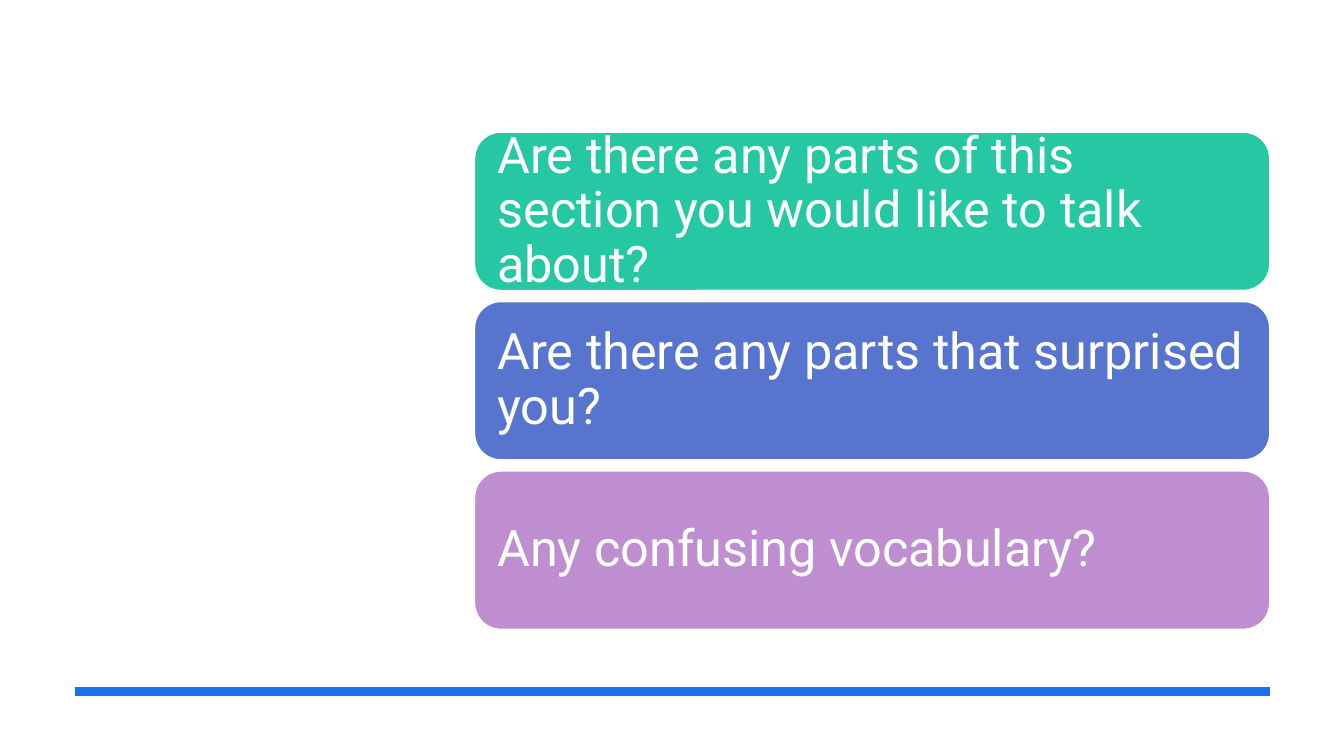
from dataclasses import dataclass

from lxml import etree
from pptx import Presentation
from pptx import util as u
from pptx.dml.color import RGBColor
from pptx.enum import shapes, text
from pptx.oxml.ns import qn


@dataclass(frozen=True)
class Theme:
    font: str = "Roboto"
    question_size: int = 36
    white: str = "FFFFFF"
    rule: str = "1973EB"
    cards: tuple = ("25C8A2", "5775CF", "BF8ED1")


QUESTIONS = (
    "Are there any parts of this section you would like to talk about?",
    "Are there any parts that surprised you?",
    "Any confusing vocabulary?",
)
CARD_LEFT, CARD_TOP = 11.96, 3.33
CARD_WIDTH, CARD_HEIGHT = 20.04, 3.99
CARD_PITCH = 4.27
CARD_INSET = 0.38
RULE_LEFT, RULE_RIGHT, RULE_Y = 1.88, 32.0, 17.42


class SlideBuilder:
    """Draws styled elements on the current slide; lengths are centimetres."""

    def __init__(self, slide, theme):
        self.slide = slide
        self.theme = theme

    def rule(self, left, right, y, weight):
        rule = self.slide.shapes.add_connector(
            shapes.MSO_CONNECTOR.STRAIGHT, u.Cm(left), u.Cm(y), u.Cm(right), u.Cm(y))
        rule.line.color.rgb = RGBColor.from_string(self.theme.rule)
        rule.line.width = u.Pt(weight)
        etree.SubElement(rule._element.spPr, qn("a:effectLst"))

    def card(self, question, top, fill):
        white = RGBColor.from_string(self.theme.white)
        card = self.slide.shapes.add_shape(
            shapes.MSO_SHAPE.ROUNDED_RECTANGLE,
            u.Cm(CARD_LEFT), u.Cm(top), u.Cm(CARD_WIDTH), u.Cm(CARD_HEIGHT))
        card.shadow.inherit = False
        card.fill.solid()
        card.fill.fore_color.rgb = RGBColor.from_string(fill)
        card.line.color.rgb = white
        card.line.width = u.Pt(1)

        frame = card.text_frame
        frame.word_wrap = True
        frame.vertical_anchor = text.MSO_ANCHOR.MIDDLE
        frame.margin_left = frame.margin_right = u.Cm(CARD_INSET)
        frame.margin_top = frame.margin_bottom = u.Cm(CARD_INSET)
        frame.text = question
        paragraph = frame.paragraphs[0]
        paragraph.alignment = text.PP_ALIGN.LEFT
        paragraph.line_spacing = 0.9
        font = paragraph.runs[0].font
        font.name = self.theme.font
        font.size = u.Pt(self.theme.question_size)
        font.color.rgb = white


def main():
    deck = Presentation()
    deck.slide_width, deck.slide_height = u.Cm(33.87), u.Cm(19.05)
    theme = Theme()
    builder = SlideBuilder(deck.slides.add_slide(deck.slide_layouts[6]), theme)
    builder.rule(RULE_LEFT, RULE_RIGHT, RULE_Y, weight=6)
    for row, (question, fill) in enumerate(zip(QUESTIONS, theme.cards)):
        builder.card(question, CARD_TOP + row * CARD_PITCH, fill)
    deck.save("out.pptx")


if __name__ == "__main__":
    main()
